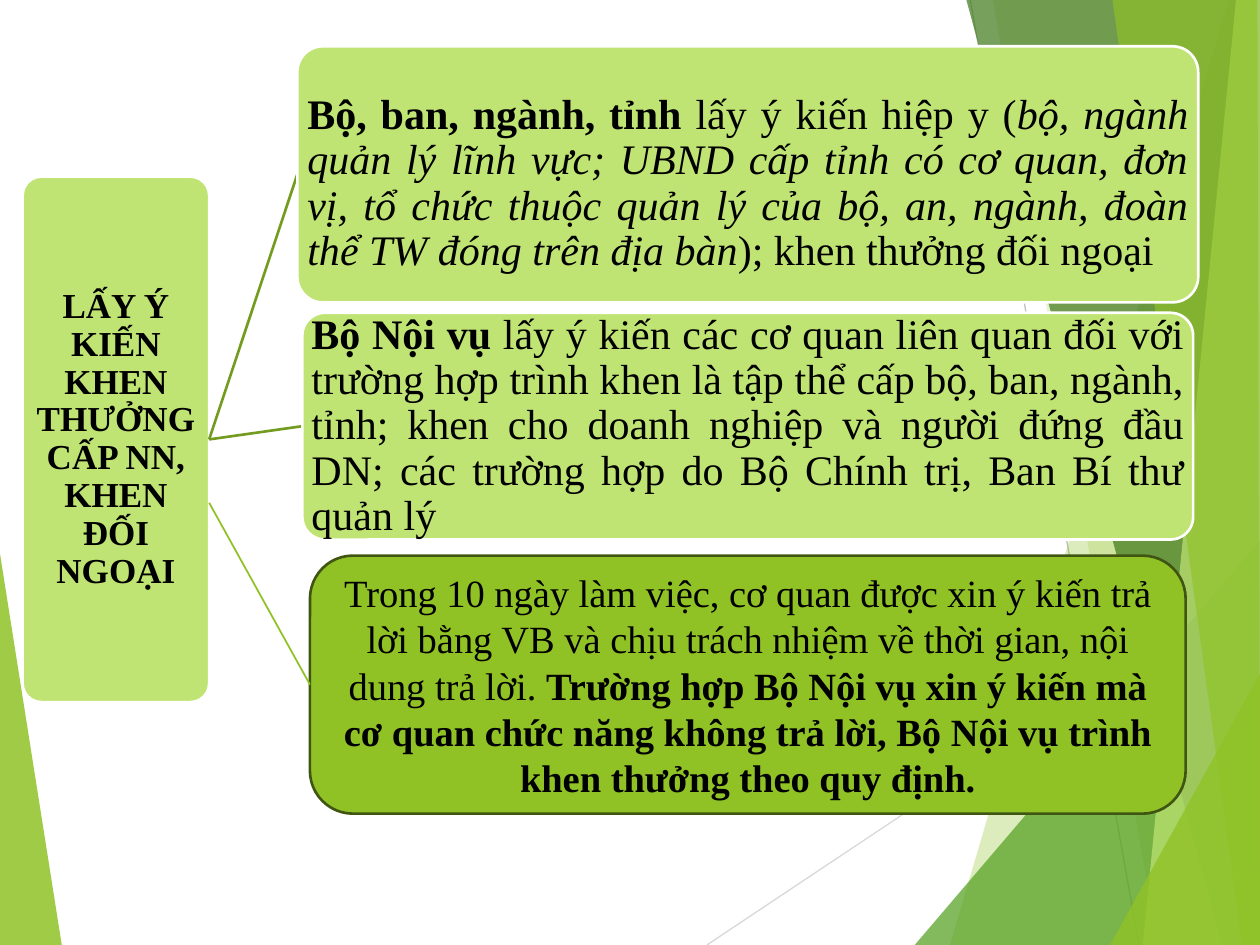
from lxml import etree
from pptx import Presentation
from pptx.dml.color import RGBColor
from pptx.enum.shapes import MSO_CONNECTOR, MSO_SHAPE
from pptx.enum.text import MSO_ANCHOR, PP_ALIGN
from pptx.oxml.ns import qn
from pptx.util import Inches, Pt

STRAIGHT, ROUNDED = MSO_CONNECTOR.STRAIGHT, MSO_SHAPE.ROUNDED_RECTANGLE
MIDDLE, CENTER, JUSTIFY = MSO_ANCHOR.MIDDLE, PP_ALIGN.CENTER, PP_ALIGN.JUSTIFY

THEME = dict(
    font="Times New Roman", text="000000", white="FFFFFF",
    lime="C0E474", green="90C226", leaf="54A021", forest="3F7819",
    branch="739B1E", edge="3F5511", silver="D9D9D9", grey="BFBFBF",
    hub_size=20, box_size=24, note_size=22,
)
W, H = Inches(10), Inches(7.5)

# All places are percentages of the slide's width and height.
BACK_LINES = [((56.1, 100), (100, 61), "silver"), ((77, 0), (90.4, 100), "grey")]
# colour, opacity, corner points
FACETS = [
    ("green", 85, [(0, 58.6), (4.9, 100), (0, 100)]),
    ("green", 30, [(97.5, 0), (75.4, 100), (100, 100), (100, 0)]),
    ("green", 20, [(78.8, 0), (91.9, 100), (100, 100), (100, 0)]),
    ("leaf", 72, [(72.6, 100), (100, 57.2), (100, 100)]),
    ("forest", 70, [(76.7, 0), (97, 100), (100, 100), (100, 0)]),
    ("lime", 70, [(98.1, 0), (90.7, 100), (100, 100), (100, 0)]),
    ("green", 65, [(88.3, 0), (98.6, 100), (100, 100), (99.8, 0)]),
    ("green", 80, [(88.1, 100), (100, 71.3), (100, 100)]),
]

# Runs are (text, style), where style holds b for bold and i for italic.
HUB = dict(at=(1.8, 18.7, 14.8, 55.6), size="hub_size", inset=(0.01,) * 4,
           runs=[("LẤY Ý KIẾN KHEN THƯỞNG CẤP NN, KHEN ĐỐI NGOẠI", "b")])
BRANCHES = [
    dict(at=(23.6, 4.9, 71.5, 27.1), align=JUSTIFY, inset=(0.02, 0.17, 0.02, 0.02),
         runs=[("Bộ, ban, ngành, tỉnh ", "b"),
               ("lấy ý kiến hiệp y (", ""),
               ("bộ, ngành quản lý lĩnh vực; UBND cấp tỉnh có cơ quan, đơn vị, "
                "tổ chức thuộc quản lý của bộ, an, ngành, đoàn thể TW đóng trên "
                "địa bàn", "i"),
               ("); khen thưởng đối ngoại", "")]),
    dict(at=(24, 33.1, 70.7, 24), align=JUSTIFY, inset=(0.02,) * 4,
         runs=[("Bộ Nội vụ ", "b"),
               ("lấy ý kiến các cơ quan liên quan đối với trường hợp trình khen "
                "là tập thể cấp bộ, ban, ngành, tỉnh; khen cho doanh nghiệp và "
                "người đứng đầu DN; các trường hợp do Bộ Chính trị, Ban Bí thư "
                "quản lý", "")]),
]
NOTE = dict(at=(24.6, 58.8, 69.5, 27.3), size="note_size", fill="green", line="edge",
            corner=1 / 6, spacing=1, inset=(0.1, 0.05, 0.1, 0.05),
            runs=[("Trong 10 ngày làm việc, cơ quan được xin ý kiến trả lời bằng VB "
                   "và chịu trách nhiệm về thời gian, nội dung trả lời. ", ""),
                  ("Trường hợp Bộ Nội vụ xin ý kiến mà cơ quan chức năng không trả "
                   "lời, Bộ Nội vụ trình khen thưởng theo quy định.", "b")])
NOTE_START = 53.2


def color(name):
    return RGBColor.from_string(THEME[name])


def place(x, y):
    return round(W * x / 100), round(H * y / 100)


def add_line(s, start, end, name, width):
    c = s.shapes.add_connector(STRAIGHT, *place(*start), *place(*end))
    c.line.color.rgb = color(name)
    c.line.width = Pt(width)
    etree.SubElement(c._element.spPr, qn("a:effectLst"))


def add_facet(s, name, opacity, points):
    first, *rest = [place(*pt) for pt in points]
    fb = s.shapes.build_freeform(*first)
    fb.add_line_segments(rest, close=True)
    sp = fb.convert_to_shape()
    sp.shadow.inherit = False
    sp.fill.solid()
    sp.fill.fore_color.rgb = color(name)
    sp.line.fill.background()
    rgb = sp._element.spPr.find(".//" + qn("a:srgbClr"))
    etree.SubElement(rgb, qn("a:alpha"), val=str(opacity * 1000))


def write(tf, runs, size, align=CENTER, spacing=0.9, inset=(0, 0, 0, 0)):
    tf.word_wrap = True
    tf.vertical_anchor = MIDDLE
    tf.margin_left, tf.margin_top, tf.margin_right, tf.margin_bottom = map(Inches, inset)
    p = tf.paragraphs[0]
    p.alignment, p.line_spacing = align, spacing
    for text, style in runs:
        r = p.add_run()
        r.text = text
        f = r.font
        f.name, f.size = THEME["font"], Pt(THEME[size])
        f.bold, f.italic = "b" in style, "i" in style
        f.color.rgb = color("text")


def add_box(s, at, runs, size="box_size", fill="lime", line="white", corner=0.1, **fmt):
    sp = s.shapes.add_shape(ROUNDED, *place(*at[:2]), *place(*at[2:]))
    sp.shadow.inherit = False
    sp.adjustments[0] = corner
    sp.fill.solid()
    sp.fill.fore_color.rgb = color(fill)
    sp.line.color.rgb = color(line)
    sp.line.width = Pt(1.5)
    write(sp.text_frame, runs, size, **fmt)


def left_middle(box):
    x, y, _, h = box["at"]
    return x, y + h / 2


def main():
    prs = Presentation()
    prs.slide_width, prs.slide_height = W, H
    s = prs.slides.add_slide(prs.slide_layouts[6])

    for start, end, name in BACK_LINES:
        add_line(s, start, end, name, 0.75)
    for facet in FACETS:
        add_facet(s, *facet)

    x, y, w, h = HUB["at"]
    add_box(s, **HUB)
    for box in BRANCHES:
        add_line(s, (x + w, y + h / 2), left_middle(box), "branch", 1.5)
        add_box(s, **box)
    add_box(s, **NOTE)
    add_line(s, (x + w, NOTE_START), left_middle(NOTE), "green", 1)

    prs.save("out.pptx")


if __name__ == "__main__":
    main()
